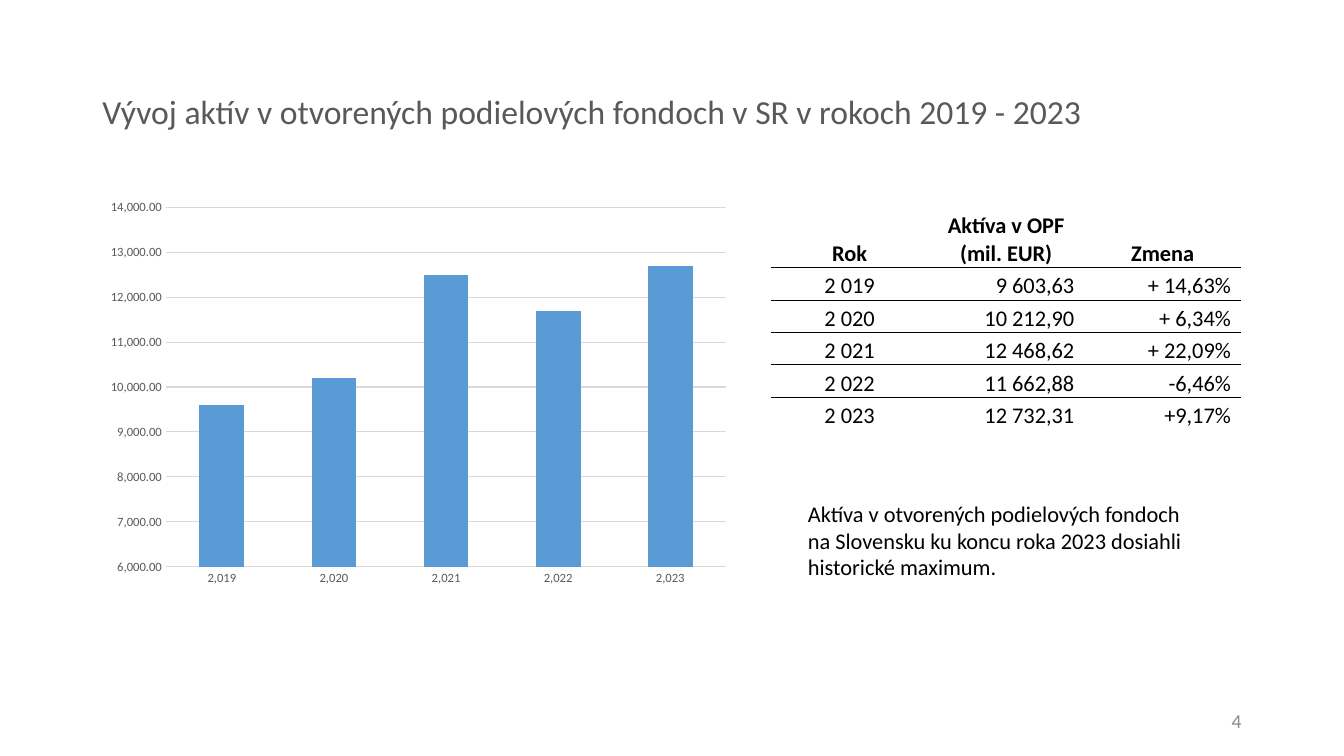
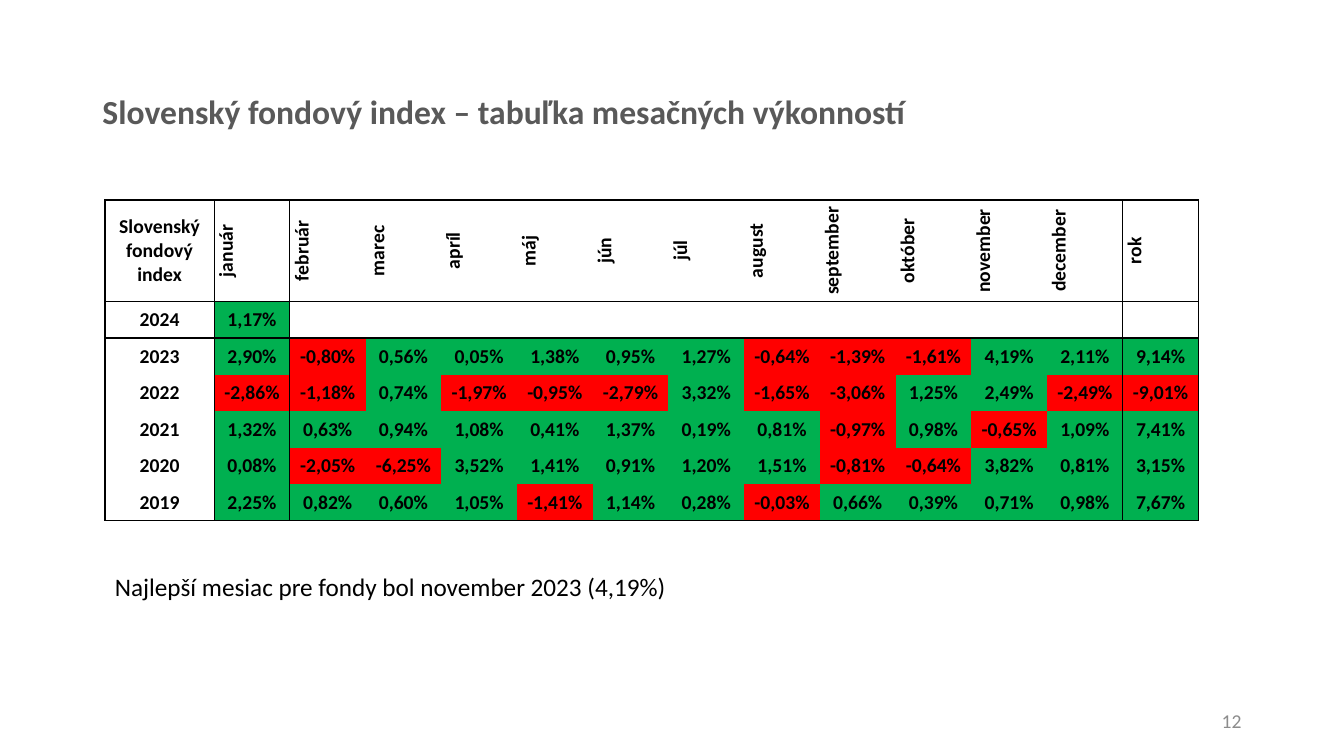
from dataclasses import dataclass

from lxml import etree
from pptx import Presentation
from pptx.chart.data import CategoryChartData
from pptx.dml.color import RGBColor
from pptx.enum.chart import XL_CHART_TYPE, XL_TICK_MARK
from pptx.enum.text import MSO_ANCHOR, MSO_AUTO_SIZE, PP_ALIGN
from pptx.oxml.ns import qn
from pptx.presentation import Presentation as Deck
from pptx.slide import Slide
from pptx.table import Table, _Cell
from pptx.text.text import TextFrame
from pptx.util import Pt

BLACK = RGBColor(0x00, 0x00, 0x00)
TITLE_GREY = RGBColor(0x59, 0x59, 0x59)
NUMBER_GREY = RGBColor(0x8C, 0x8C, 0x8C)
GRID_GREY = RGBColor(0xD9, 0xD9, 0xD9)
BAR_BLUE = RGBColor(0x5B, 0x9B, 0xD5)
GAIN_GREEN = RGBColor(0x00, 0xB0, 0x50)
LOSS_RED = RGBColor(0xFF, 0x00, 0x00)

LEFT, CENTER, RIGHT = PP_ALIGN.LEFT, PP_ALIGN.CENTER, PP_ALIGN.RIGHT
TOP, MIDDLE, BOTTOM = MSO_ANCHOR.TOP, MSO_ANCHOR.MIDDLE, MSO_ANCHOR.BOTTOM
NO_AUTOFIT = MSO_AUTO_SIZE.NONE
NO_TICKS = XL_TICK_MARK.NONE
COLUMNS = XL_CHART_TYPE.COLUMN_CLUSTERED

FONT = "Calibri"
TITLE_ONLY = 5
PLAIN_TABLE_STYLE = "{2D5ABB26-0587-4C30-8999-92F81FD0307C}"

ASSETS = [
    ("Rok", "Aktíva v OPF\n(mil. EUR)", "Zmena"),
    ("2 019", "9 603,63", "+ 14,63%"),
    ("2 020", "10 212,90", "+ 6,34%"),
    ("2 021", "12 468,62", "+ 22,09%"),
    ("2 022", "11 662,88", "-6,46%"),
    ("2 023", "12 732,31", "+9,17%"),
]
ASSETS_BY_YEAR = {2019: 9600, 2020: 10200, 2021: 12500, 2022: 11700, 2023: 12700}

MONTHS = ("január február marec apríl máj jún júl august september "
          "október november december").split()
RETURNS = {
    "2024": "1,17%",
    "2023": "2,90% -0,80% 0,56% 0,05% 1,38% 0,95% 1,27% -0,64% -1,39% -1,61% 4,19% 2,11% 9,14%",
    "2022": "-2,86% -1,18% 0,74% -1,97% -0,95% -2,79% 3,32% -1,65% -3,06% 1,25% 2,49% -2,49% -9,01%",
    "2021": "1,32% 0,63% 0,94% 1,08% 0,41% 1,37% 0,19% 0,81% -0,97% 0,98% -0,65% 1,09% 7,41%",
    "2020": "0,08% -2,05% -6,25% 3,52% 1,41% 0,91% 1,20% 1,51% -0,81% -0,64% 3,82% 0,81% 3,15%",
    "2019": "2,25% 0,82% 0,60% 1,05% -1,41% 1,14% 0,28% -0,03% 0,66% 0,39% 0,71% 0,98% 7,67%",
}


@dataclass(frozen=True)
class Box:
    left: float
    top: float
    width: float
    height: float

    def lengths(self) -> tuple[Pt, Pt, Pt, Pt]:
        return Pt(self.left), Pt(self.top), Pt(self.width), Pt(self.height)


@dataclass(frozen=True)
class TextStyle:
    size: float
    color: RGBColor = BLACK
    bold: bool = False
    align: PP_ALIGN = LEFT
    spacing: float = 1.0


TITLE_BOX = Box(66, 29, 860, 104)
NUMBER_BOX = Box(678, 500, 216, 29)
NUMBER_STYLE = TextStyle(14, NUMBER_GREY, align=RIGHT)


def write(frame: TextFrame, text: str, style: TextStyle) -> None:
    frame.text = text
    for paragraph in frame.paragraphs:
        paragraph.alignment = style.align
        paragraph.line_spacing = style.spacing
        font = paragraph.font
        font.name = FONT
        font.size = Pt(style.size)
        font.bold = style.bold
        font.color.rgb = style.color


def add_text(slide: Slide, box: Box, text: str, style: TextStyle, anchor: MSO_ANCHOR = TOP) -> None:
    frame = slide.shapes.add_textbox(*box.lengths()).text_frame
    frame.word_wrap = True
    frame.vertical_anchor = anchor
    write(frame, text, style)


def add_titled_slide(deck: Deck, title: str, number: int, bold: bool = False) -> Slide:
    slide = deck.slides.add_slide(deck.slide_layouts[TITLE_ONLY])
    heading = slide.shapes.title
    heading.left, heading.top, heading.width, heading.height = TITLE_BOX.lengths()
    heading.text_frame.auto_size = NO_AUTOFIT
    heading.text_frame.vertical_anchor = MIDDLE
    write(heading.text_frame, title, TextStyle(24, TITLE_GREY, bold, spacing=0.9))
    add_text(slide, NUMBER_BOX, str(number), NUMBER_STYLE, MIDDLE)
    return slide


def add_plain_table(slide: Slide, left: float, top: float,
                    widths: list[float], heights: list[float]) -> Table:
    box = Box(left, top, sum(widths), sum(heights))
    frame = slide.shapes.add_table(len(heights), len(widths), *box.lengths())
    for style_id in frame.element.iter(qn("a:tableStyleId")):
        style_id.text = PLAIN_TABLE_STYLE
    table = frame.table
    table.first_row = table.horz_banding = False
    for column, width in zip(table.columns, widths):
        column.width = Pt(width)
    for row, height in zip(table.rows, heights):
        row.height = Pt(height)
    return table


def format_cell(cell: _Cell, text: str, style: TextStyle, anchor: MSO_ANCHOR,
                sides: str, line_width: float, fill: RGBColor | None = None,
                right_margin: float = 0) -> None:
    cell.margin_left = cell.margin_top = cell.margin_bottom = 0
    cell.margin_right = Pt(right_margin)
    cell.vertical_anchor = anchor
    write(cell.text_frame, text, style)
    properties = cell._tc.get_or_add_tcPr()
    for side in sides:
        line = etree.SubElement(properties, qn(f"a:ln{side}"), w=str(Pt(line_width)))
        solid = etree.SubElement(line, qn("a:solidFill"))
        etree.SubElement(solid, qn("a:srgbClr"), val=str(BLACK))
    if fill is None:
        cell.fill.background()
    else:
        cell.fill.solid()
        cell.fill.fore_color.rgb = fill


def add_assets_table(slide: Slide) -> None:
    last_row = len(ASSETS) - 1
    table = add_plain_table(slide, 551, 145, [111.8] * 3, [46] + [23.2] * last_row)
    for row, record in enumerate(ASSETS):
        for col, text in enumerate(record):
            is_amount = row > 0 and col > 0
            style = TextStyle(16, bold=row == 0, align=RIGHT if is_amount else CENTER)
            sides = ("T" if row > 0 else "") + ("B" if row < last_row else "")
            format_cell(table.cell(row, col), text, style, BOTTOM, sides, 0.5,
                        right_margin=7.2 if is_amount else 0)


def add_assets_chart(slide: Slide) -> None:
    data = CategoryChartData(number_format="#,##0.00")
    data.categories = list(ASSETS_BY_YEAR)
    data.categories.number_format = "#,##0"
    data.add_series("Aktíva v OPF", list(ASSETS_BY_YEAR.values()))
    chart = slide.shapes.add_chart(COLUMNS, *Box(70, 137, 458, 287).lengths(), data).chart
    chart.has_legend = chart.has_title = False
    chart.font.name = FONT
    chart.font.size = Pt(10)
    chart.font.color.rgb = BLACK

    bars = chart.plots[0]
    bars.gap_width = 150
    bars.vary_by_categories = False
    bars.series[0].format.fill.solid()
    bars.series[0].format.fill.fore_color.rgb = BAR_BLUE

    years, amounts = chart.category_axis, chart.value_axis
    for axis, number_format in ((years, "#,##0"), (amounts, "#,##0.00")):
        axis.major_tick_mark = axis.minor_tick_mark = NO_TICKS
        axis.format.line.fill.background()
        labels = axis.tick_labels
        labels.number_format = number_format
        labels.number_format_is_linked = False
        labels.font.name = FONT
        labels.font.size = Pt(9)
        labels.font.color.rgb = TITLE_GREY
    amounts.minimum_scale, amounts.maximum_scale = 6000, 14000
    amounts.major_unit = 1000
    amounts.has_major_gridlines = True
    amounts.major_gridlines.format.line.width = Pt(0.75)
    amounts.major_gridlines.format.line.color.rgb = GRID_GREY


def return_color(value: str) -> RGBColor | None:
    if not value:
        return None
    return LOSS_RED if value.startswith("-") else GAIN_GREEN


def add_returns_table(slide: Slide) -> None:
    header = ["Slovenský fondový index", *MONTHS, "rok"]
    last_row, last_col = len(RETURNS), len(header) - 1
    records = [header]
    for year, values in RETURNS.items():
        record = [year, *values.split()]
        records.append(record + [""] * (len(header) - len(record)))

    table = add_plain_table(slide, 75, 142.8, [78] + [54.1] * last_col, [72.6] + [26.1] * last_row)
    style = TextStyle(14, bold=True, align=CENTER)
    for row, record in enumerate(records):
        for col, text in enumerate(record):
            bordered = {
                "L": col in (0, 1, last_col),
                "R": col in (0, last_col - 1, last_col),
                "T": row in (0, 1),
                "B": row in (0, last_row),
            }
            sides = "".join(side for side, shown in bordered.items() if shown)
            is_return = row > 0 and col > 0
            cell = table.cell(row, col)
            format_cell(cell, text, style, MIDDLE, sides, 1,
                        return_color(text) if is_return else None)
            if row == 0 and col > 0:
                cell._tc.get_or_add_tcPr().set("vert", "vert270")


def add_assets_slide(deck: Deck) -> None:
    slide = add_titled_slide(
        deck, "Vývoj aktív v otvorených podielových fondoch v SR v rokoch 2019 - 2023", 4)
    add_text(slide, Box(570, 353.5, 296, 65.5),
             "Aktíva v otvorených podielových fondoch na Slovensku ku koncu roka 2023 "
             "dosiahli historické maximum.", TextStyle(16))
    add_assets_table(slide)
    add_assets_chart(slide)


def add_returns_slide(deck: Deck) -> None:
    slide = add_titled_slide(
        deck, "Slovenský fondový index – tabuľka mesačných výkonností", 12, bold=True)
    add_text(slide, Box(75, 400, 786, 32),
             "Najlepší mesiac pre fondy bol november 2023 (4,19%)", TextStyle(18, spacing=1.2))
    add_returns_table(slide)


def main() -> None:
    deck = Presentation()
    deck.slide_width, deck.slide_height = Pt(960), Pt(540)
    add_assets_slide(deck)
    add_returns_slide(deck)
    deck.save("out.pptx")


if __name__ == "__main__":
    main()
